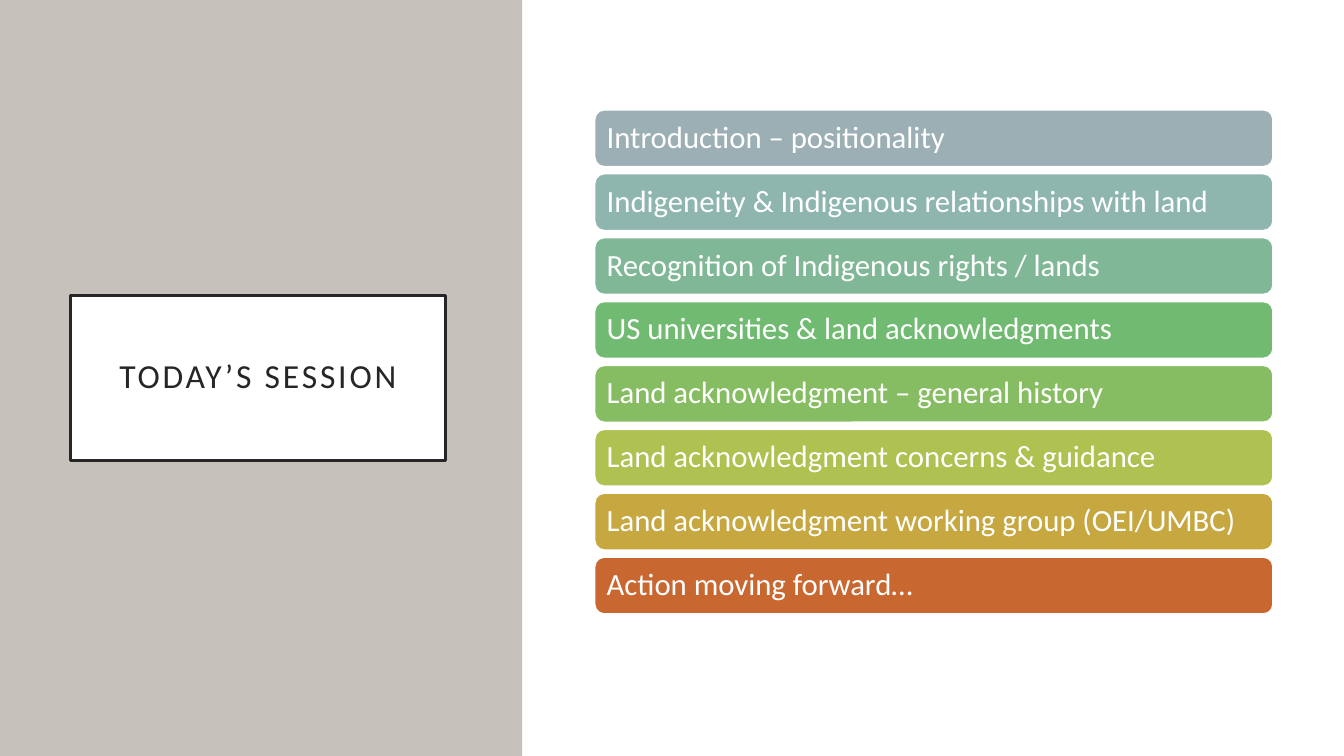
from dataclasses import dataclass

from pptx import Presentation
from pptx.dml.color import RGBColor
from pptx.enum.shapes import MSO_SHAPE
from pptx.enum.text import MSO_ANCHOR, MSO_AUTO_SIZE, PP_ALIGN
from pptx.util import Cm, Pt

RECT = MSO_SHAPE.RECTANGLE
ROUND_RECT = MSO_SHAPE.ROUNDED_RECTANGLE
MIDDLE = MSO_ANCHOR.MIDDLE
NO_AUTOFIT = MSO_AUTO_SIZE.NONE
LEFT = PP_ALIGN.LEFT
CENTER = PP_ALIGN.CENTER

SLIDE_W, SLIDE_H = 33.87, 19.05
TITLE_ONLY = 5


@dataclass(frozen=True)
class Theme:
    font: str = "Calibri"
    title_size: float = 24
    bar_size: float = 22
    title_spacing: float = 2
    line_spacing: float = 0.9
    ink: str = "262626"
    white: str = "FFFFFF"
    panel: str = "C6C1BA"


THEME = Theme()

AGENDA = [
    ("Introduction – positionality", "9BAFB5"),
    ("Indigeneity & Indigenous relationships with land", "8EB6AF"),
    ("Recognition of Indigenous rights / lands", "80B897"),
    ("US universities & land acknowledgments", "71BA71"),
    ("Land acknowledgment – general history", "87BD62"),
    ("Land acknowledgment concerns & guidance", "AEC151"),
    ("Land acknowledgment working group (OEI/UMBC)", "C6A740"),
    ("Action moving forward…", "C96731"),
]
BAR_LEFT, BAR_TOP, BAR_W, BAR_H = 14.99, 2.77, 17.09, 1.43
BAR_PITCH = 1.61


def paint(sp, fill, line=None, width=1):
    sp.fill.solid()
    sp.fill.fore_color.rgb = RGBColor.from_string(fill)
    if line:
        sp.line.color.rgb = RGBColor.from_string(line)
        sp.line.width = Pt(width)
    else:
        sp.line.fill.background()


def write(sp, text, size, color, align, inset):
    tf = sp.text_frame
    tf.text = text
    tf.word_wrap = True
    tf.auto_size = NO_AUTOFIT
    tf.vertical_anchor = MIDDLE
    tf.margin_left = tf.margin_right = Cm(inset)
    tf.margin_top = tf.margin_bottom = Cm(inset)
    p = tf.paragraphs[0]
    p.alignment = align
    p.line_spacing = THEME.line_spacing
    r = p.runs[0]
    r.font.name = THEME.font
    r.font.size = Pt(size)
    r.font.color.rgb = RGBColor.from_string(color)
    return r


def add_panel(slide, left, width, fill):
    sp = slide.shapes.add_shape(RECT, Cm(left), Cm(0), Cm(width), Cm(SLIDE_H))
    sp.shadow.inherit = False
    paint(sp, fill)
    return sp


def place_title(slide, text):
    sp = slide.shapes.title
    sp.left, sp.top, sp.width, sp.height = Cm(1.78), Cm(7.44), Cm(9.45), Cm(4.17)
    paint(sp, THEME.white, THEME.ink, 2.5)
    r = write(sp, text, THEME.title_size, THEME.ink, CENTER, 0.5)
    r.font._element.set("spc", str(int(THEME.title_spacing * 100)))
    slide.shapes._spTree.append(sp._element)


def add_bar(group, top, text, fill):
    sp = group.shapes.add_shape(ROUND_RECT, Cm(BAR_LEFT), Cm(top), Cm(BAR_W), Cm(BAR_H))
    sp.shadow.inherit = False
    paint(sp, fill, THEME.white)
    write(sp, text, THEME.bar_size, THEME.white, LEFT, 0.23)


def add_agenda(slide, items):
    group = slide.shapes.add_group_shape()
    for i, (text, fill) in enumerate(items):
        add_bar(group, BAR_TOP + i * BAR_PITCH, text, fill)


def main():
    prs = Presentation()
    prs.slide_width, prs.slide_height = Cm(SLIDE_W), Cm(SLIDE_H)
    slide = prs.slides.add_slide(prs.slide_layouts[TITLE_ONLY])
    add_panel(slide, 0, 13.16, THEME.panel)
    place_title(slide, "TODAY’S SESSION")
    add_panel(slide, 13.2, SLIDE_W - 13.2, THEME.white)
    add_agenda(slide, AGENDA)
    prs.save("out.pptx")


if __name__ == "__main__":
    main()
